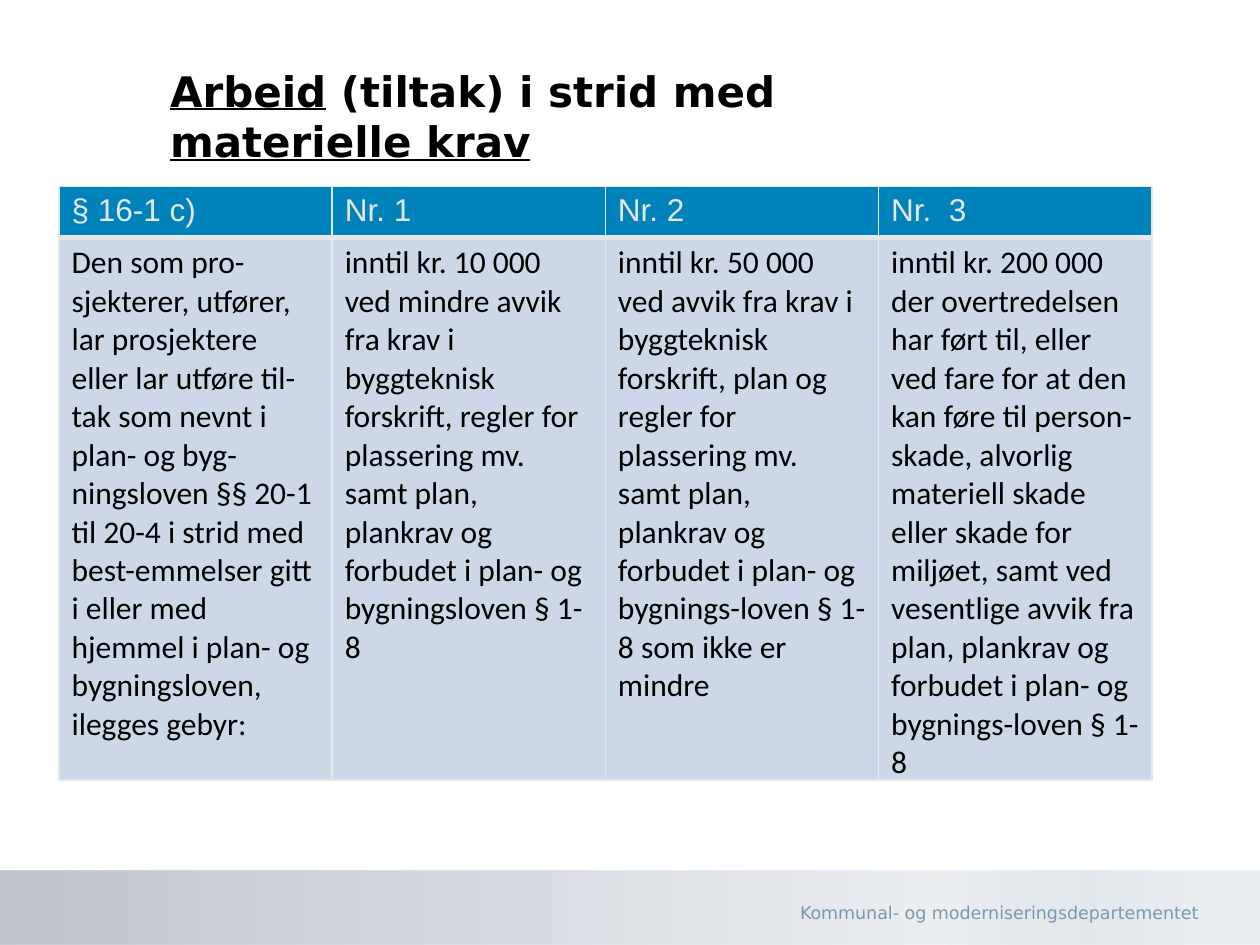
from lxml import etree
from pptx import Presentation
from pptx.dml.color import RGBColor as RGB
from pptx.enum.shapes import MSO_SHAPE as SHAPE
from pptx.enum.text import MSO_ANCHOR as ANCHOR, PP_ALIGN as ALIGN
from pptx.oxml import parse_xml
from pptx.oxml.ns import nsdecls, qn
from pptx.util import Cm, Pt

COLORS = {
    "text": "000000", "header": "0082BA", "body": "CCD8E7", "line": "E6E7E8",
    "footer": "7C96AD", "band_left": "7F899E", "band_mid": "D9DFE5",
}
BAND_STOPS = [(0, "band_left", 50), (75, "band_mid", 48), (94, "footer", 16)]
TITLE = [("Arbeid", True), (" (tiltak) i strid med ", False), ("materielle krav", True)]
ROWS = [
    ["§ 16-1 c)", "Nr. 1", "Nr. 2", "Nr.  3"],
    [
        "Den som pro-sjekterer, utfører, lar prosjektere eller lar utføre til-tak som nevnt i "
        "plan- og byg-ningsloven §§ 20-1 til 20-4 i strid med best-emmelser gitt i eller med "
        "hjemmel i plan- og bygningsloven, ilegges gebyr:",
        "inntil kr. 10 000 ved mindre avvik fra krav i byggteknisk forskrift, regler for "
        "plassering mv. samt plan, plankrav og forbudet i plan- og bygningsloven § 1-8",
        "inntil kr. 50 000 ved avvik fra krav i byggteknisk forskrift, plan og regler for "
        "plassering mv. samt plan, plankrav og forbudet i plan- og bygnings-loven § 1-8 "
        "som ikke er mindre",
        "inntil kr. 200 000 der overtredelsen har ført til, eller ved fare for at den kan "
        "føre til person-skade, alvorlig materiell skade eller skade for miljøet, samt ved "
        "vesentlige avvik fra plan, plankrav og forbudet i plan- og bygnings-loven § 1-8",
    ],
]


def write(tf, runs, font="DejaVu Sans", size=18, color="text", bold=False, align=ALIGN.LEFT):
    p = tf.paragraphs[0]
    p.alignment = align
    for text, underline in runs:
        r = p.add_run()
        r.text = text
        r.font.name = font
        r.font.size = Pt(size)
        r.font.bold = bold
        r.font.underline = underline
        r.font.color.rgb = RGB.from_string(COLORS[color])


class Deck:
    def __init__(self, prs):
        self.s = prs.slides.add_slide(prs.slide_layouts[6])

    def band(self, x, y, w, h, stops):
        sp = self.s.shapes.add_shape(SHAPE.RECTANGLE, Cm(x), Cm(y), Cm(w), Cm(h))
        sp.shadow.inherit = False
        sp.line.fill.background()
        sp.fill.gradient()
        sp.fill.gradient_angle = 0
        stop_list = sp.fill._xPr.find(qn("a:gradFill")).find(qn("a:gsLst"))
        for old in list(stop_list):
            stop_list.remove(old)
        for pos, color, opacity in stops:
            gs = etree.SubElement(stop_list, qn("a:gs"), pos=str(pos * 1000))
            rgb = etree.SubElement(gs, qn("a:srgbClr"), val=COLORS[color])
            etree.SubElement(rgb, qn("a:alpha"), val=str(opacity * 1000))

    def text(self, x, y, w, h, runs, anchor, **style):
        tf = self.s.shapes.add_textbox(Cm(x), Cm(y), Cm(w), Cm(h)).text_frame
        tf.word_wrap = True
        tf.vertical_anchor = anchor
        write(tf, runs, **style)

    def cell(self, cell, text, fill, bottom=1, **style):
        write(cell.text_frame, [(text, False)], **style)
        cell.fill.solid()
        cell.fill.fore_color.rgb = RGB.from_string(COLORS[fill])
        tc_pr = cell._tc.get_or_add_tcPr()
        for i, side in enumerate("LRTB"):
            width = Pt(bottom if side == "B" else 1)
            tc_pr.insert(i, parse_xml(
                f'<a:ln{side} {nsdecls("a")} w="{width}"><a:solidFill>'
                f'<a:srgbClr val="{COLORS["line"]}"/></a:solidFill></a:ln{side}>'))

    def table(self, x, y, w, heights, rows):
        shape = self.s.shapes.add_table(len(rows), len(rows[0]), Cm(x), Cm(y), Cm(w), Cm(sum(heights)))
        table = shape.table
        for row, height in zip(table.rows, heights):
            row.height = Cm(height)
        for i, texts in enumerate(rows):
            for j, text in enumerate(texts):
                if i == 0:
                    self.cell(table.cell(i, j), text, "header", bottom=3, font="Arial", color="line")
                else:
                    self.cell(table.cell(i, j), text, "body", font="Calibri")


def main():
    prs = Presentation()
    prs.slide_width, prs.slide_height = Cm(25.4), Cm(19.05)
    deck = Deck(prs)
    deck.band(0, 17.55, 25.4, 1.5, BAND_STOPS)
    deck.text(15.6, 18.06, 8.81, 0.69, [("Kommunal- og moderniseringsdepartementet", False)],
              ANCHOR.MIDDLE, size=10, color="footer", align=ALIGN.RIGHT)
    deck.text(3.18, 1.57, 16.89, 1.91, TITLE, ANCHOR.BOTTOM, size=24, bold=True)
    deck.table(1.19, 3.76, 22.03, [1.03, 10.93], ROWS)
    prs.save("out.pptx")


if __name__ == "__main__":
    main()
